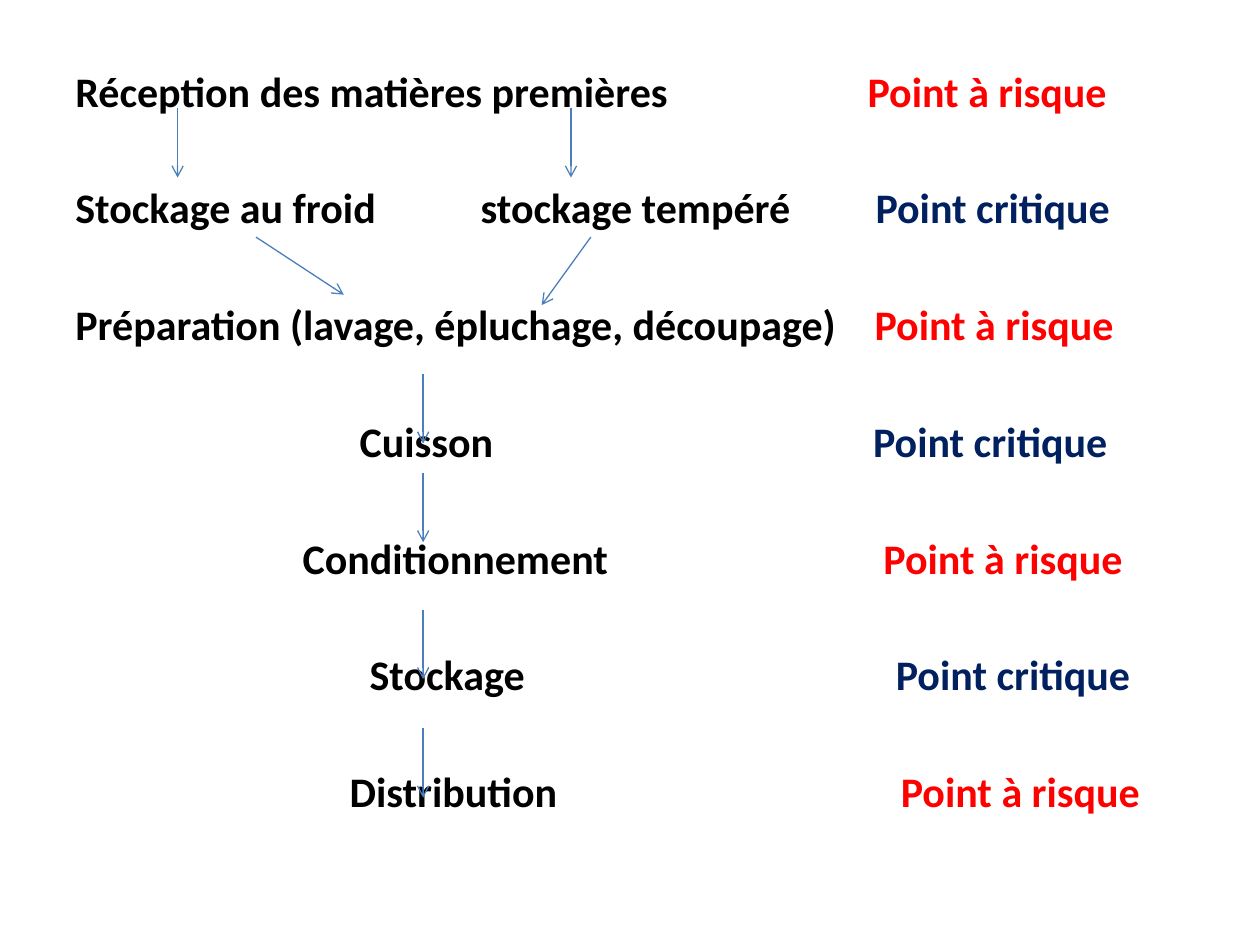
from dataclasses import dataclass

from lxml import etree
from pptx import Presentation
from pptx import util as u
from pptx.dml.color import RGBColor
from pptx.enum import shapes
from pptx.oxml import ns


@dataclass(frozen=True)
class Theme:
    font: str = "Calibri"
    size: float = 24
    gap: float = 37.9
    line: float = 0.75
    ink: str = "000000"
    risk: str = "FF0000"
    crit: str = "002060"
    blue: str = "4B7EBC"


THEME = Theme()
RISK = ("Point à risque", THEME.risk)
CRIT = ("Point critique", THEME.crit)

STEPS = [
    ([(0, "Réception des matières premières")], 15.97, RISK),
    ([(0, "Stockage au froid"), (8.17, "stockage tempéré")], 16.13, CRIT),
    ([(0, "Préparation (lavage, épluchage, découpage)")], 16.11, RISK),
    ([(5.73, "Cuisson")], 16.08, CRIT),
    ([(4.58, "Conditionnement")], 16.29, RISK),
    ([(5.93, "Stockage")], 16.54, CRIT),
    ([(5.53, "Distribution")], 16.64, RISK),
]

DROP = 1.4
DOWN = [(2.31, 0.99), (10.24, 0.99)] + [(7.26, y) for y in (6.35, 8.34, 11.1, 13.49)]
SLANT = [(3.89, 3.59, 5.66, 4.75), (10.64, 3.59, 9.65, 4.96)]


def set_tabs(para, stops):
    tabs = etree.SubElement(para._p.get_or_add_pPr(), ns.qn("a:tabLst"))
    for stop in stops:
        etree.SubElement(tabs, ns.qn("a:tab"), pos=str(u.Cm(stop)), algn="l")


def add_run(para, words, color):
    run = para.add_run()
    run.text = words
    run.font.color.rgb = RGBColor.from_string(color)


def add_steps(slide, left, top, width, height):
    frame = slide.shapes.add_textbox(
        u.Cm(left), u.Cm(top), u.Cm(width), u.Cm(height)
    ).text_frame
    frame.word_wrap = True
    for row, (parts, end, (label, color)) in enumerate(STEPS):
        para = frame.add_paragraph() if row else frame.paragraphs[0]
        para.space_before = u.Pt(THEME.gap if row else 0)
        set_tabs(para, [x for x, _ in parts if x] + [end])
        para.font.name = THEME.font
        para.font.size = u.Pt(THEME.size)
        para.font.bold = True
        words = "".join(("\t" if x else "") + part for x, part in parts)
        add_run(para, words + "\t", THEME.ink)
        add_run(para, label, color)


def add_arrow(slide, *ends):
    arrow = slide.shapes.add_connector(
        shapes.MSO_CONNECTOR.STRAIGHT, *(u.Cm(end) for end in ends)
    )
    arrow.line.color.rgb = RGBColor.from_string(THEME.blue)
    arrow.line.width = u.Pt(THEME.line)
    etree.SubElement(arrow.line._get_or_add_ln(), ns.qn("a:tailEnd"), type="arrow")
    etree.SubElement(arrow._element.spPr, ns.qn("a:effectLst"))


def add_flow(slide, left, top):
    for x1, y1, x2, y2 in [(x, y, x, y + DROP) for x, y in DOWN] + SLANT:
        add_arrow(slide, left + x1, top + y1, left + x2, top + y2)


def main():
    deck = Presentation()
    deck.slide_width, deck.slide_height = u.Cm(25.4), u.Cm(19.05)
    slide = deck.slides.add_slide(deck.slide_layouts[6])
    left, top = 1.27, 1.19
    add_steps(slide, left, top, 22.86, 16.87)
    add_flow(slide, left, top)
    deck.save("out.pptx")


if __name__ == "__main__":
    main()
